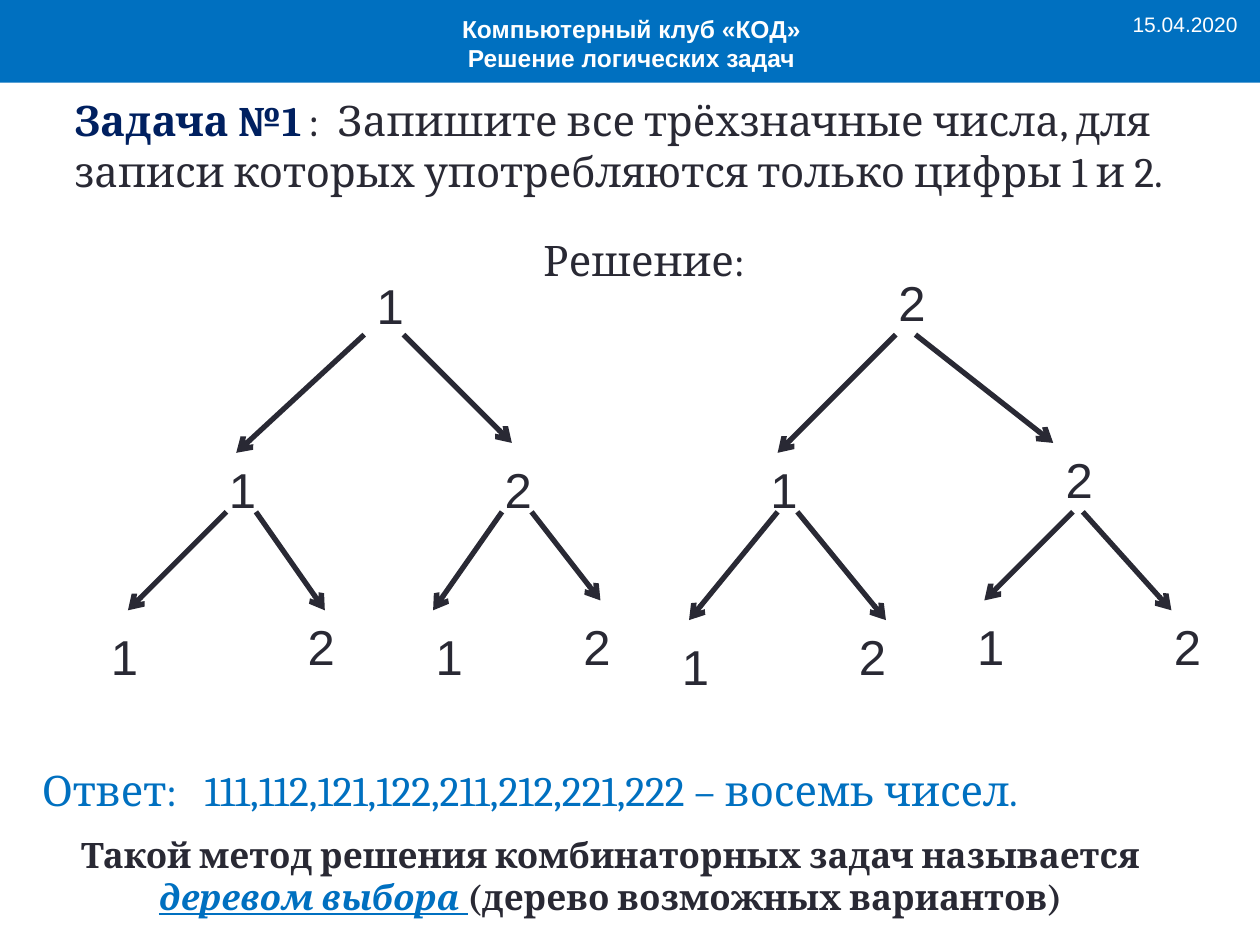
from lxml import etree
from pptx import Presentation, util as u
from pptx.dml.color import RGBColor
from pptx.enum import shapes, text
from pptx.oxml.ns import qn

INK = RGBColor(0x29, 0x29, 0x34)
BLUE = RGBColor(0x00, 0x70, 0xC0)
NAVY = RGBColor(0x00, 0x20, 0x60)
WHITE = RGBColor(0xFF, 0xFF, 0xFF)
LEFT, CENTER = text.PP_ALIGN.LEFT, text.PP_ALIGN.CENTER
TOP, MIDDLE = text.MSO_ANCHOR.TOP, text.MSO_ANCHOR.MIDDLE

deck = Presentation()
deck.slide_width, deck.slide_height = u.Inches(10), u.Inches(7.5)
slide = deck.slides.add_slide(deck.slide_layouts[6])
CELL = deck.slide_width / 128


def grid(*cells):
    return [u.Emu(round(c * CELL)) for c in cells]


def write(place, parts, font="Cambria", align=LEFT, anchor=TOP):
    frame = slide.shapes.add_textbox(*grid(*place)).text_frame
    frame.word_wrap = True
    frame.vertical_anchor = anchor
    paragraph = frame.paragraphs[0]
    paragraph.alignment = align
    for words, size, color, bold, emphasis in parts:
        first = len(paragraph.runs)
        for i, line in enumerate(words.split("\n")):
            if i:
                paragraph.add_line_break()
            paragraph.add_run().text = line
        for run in paragraph.runs[first:]:
            run.font.name, run.font.size = font, u.Pt(size)
            run.font.color.rgb = color
            run.font.bold = bold
            run.font.italic = run.font.underline = emphasis


banner = slide.shapes.add_shape(shapes.MSO_SHAPE.RECTANGLE, *grid(0, 0, 128, 8.4))
banner.shadow.inherit = False
banner.fill.solid()
banner.fill.fore_color.rgb = BLUE
banner.line.fill.background()

write((22.7, 0.3, 82.9, 8.2),
      [("Компьютерный клуб «КОД»\nРешение логических задач", 14, WHITE, True, False)],
      "Arial", CENTER, MIDDLE)
write((113.8, 0.1, 14.2, 4.6), [("15.04.2020", 12, WHITE, False, False)],
      "Arial", LEFT, MIDDLE)
write((6.3, 9, 119, 11.6), [
    ("Задача №1", 24, NAVY, True, False),
    (" ", 18, INK, False, False),
    (":  Запишите все трёхзначные числа, для записи которых "
     "употребляются только цифры 1 и 2.", 24, INK, False, False)])
write((9.4, 23.2, 113, 10.7), [("Решение: ", 24, INK, False, False)], align=CENTER)

branches = [
    (37, 34, 24, 46), (41, 34, 52, 45), (91, 34, 79, 46), (93, 34, 107, 45),
    (23, 52, 13, 62), (26, 52, 33, 62), (51, 52, 44, 62), (54, 52, 61, 61),
    (79, 52, 70, 63), (81, 52, 90, 63), (109, 52, 100, 61), (110, 52, 119, 62),
]
for ends in branches:
    branch = slide.shapes.add_connector(shapes.MSO_CONNECTOR.STRAIGHT, *grid(*ends))
    branch.line.color.rgb = INK
    branch.line.width = u.Pt(3)
    etree.SubElement(branch.line._get_or_add_ln(), qn("a:tailEnd"), type="arrow")
    etree.SubElement(branch._element.spPr, qn("a:effectLst"))

digits = {
    "1": [(37, 27.4), (22, 46), (77, 46), (10, 63), (43, 63), (68, 64), (98, 62)],
    "2": [(90, 27), (50, 46), (107, 45), (30, 62), (58, 62), (86, 63), (118, 62)],
}
for digit, corners in digits.items():
    for left, top in corners:
        write((left, top, 6, 7.3), [(digit, 28, INK, False, False)], "Arial")

write((3, 77, 123, 6.4),
      [("Ответ:   111,112,121,122,211,212,221,222 – восемь чисел.", 24, BLUE, False, False)])
write((5, 84, 114, 9.9), [
    ("Такой метод решения комбинаторных задач называется ", 20, INK, True, False),
    ("деревом выбора ", 20, BLUE, True, True),
    ("(дерево возможных вариантов)", 20, INK, True, False)], align=CENTER)

deck.save("out.pptx")
